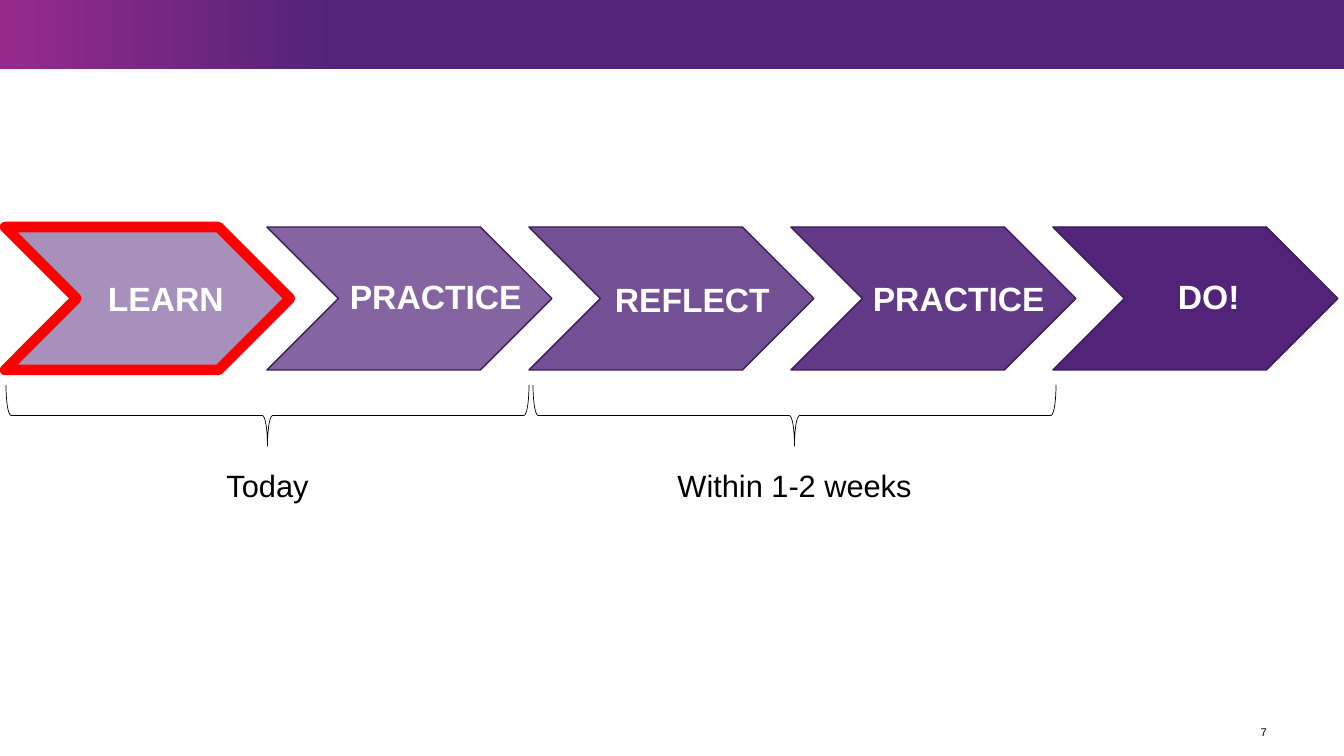
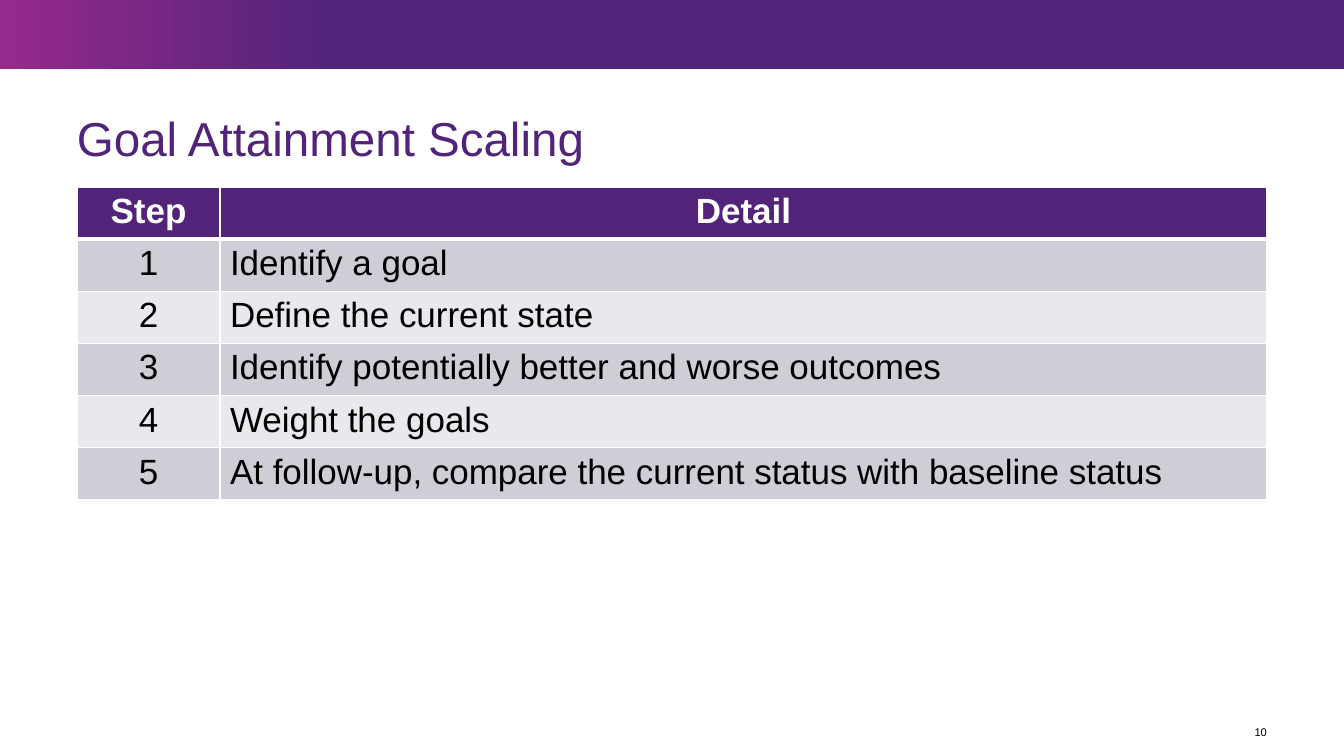
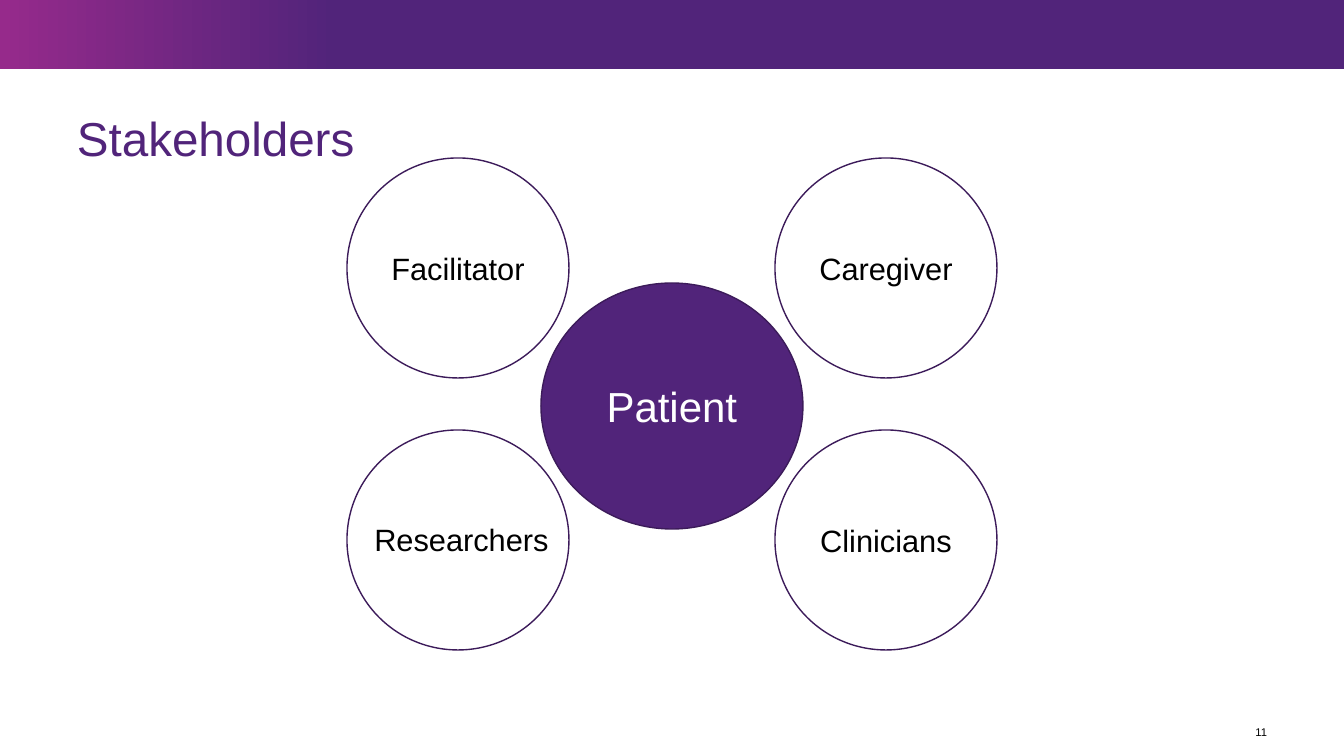
from lxml import etree
from pptx import Presentation
from pptx import util as u
from pptx.dml.color import RGBColor
from pptx.enum import shapes, text
from pptx.oxml.ns import qn

# Shared look
PURPLE = RGBColor(0x51, 0x24, 0x7A)
DARK_PURPLE = RGBColor(0x3C, 0x1B, 0x5A)
MAGENTA = RGBColor(0x96, 0x2A, 0x8B)
RED = RGBColor(0xFF, 0x00, 0x00)
WHITE = RGBColor(0xFF, 0xFF, 0xFF)
BLACK = RGBColor(0x00, 0x00, 0x00)
BAND_DARK = RGBColor(0xD0, 0xCD, 0xD7)
BAND_LIGHT = RGBColor(0xE9, 0xE8, 0xEC)
FONT = "Arial"
SLIDE_WIDTH, SLIDE_HEIGHT = 1344, 756
MARGIN = 77
CONTENT_WIDTH = SLIDE_WIDTH - 2 * MARGIN

SHAPE = shapes.MSO_SHAPE
LEFT, CENTER, RIGHT = text.PP_ALIGN.LEFT, text.PP_ALIGN.CENTER, text.PP_ALIGN.RIGHT


def px(length):
    return u.Inches(length / 100.8)


def box(left, top, width, height):
    return px(left), px(top), px(width), px(height)


def write(frame, words, size, color, align=LEFT, bold=False):
    """Put one formatted paragraph in a text frame."""
    frame.text = words
    paragraph = frame.paragraphs[0]
    paragraph.alignment = align
    font = paragraph.runs[0].font
    font.name, font.size, font.bold = FONT, u.Pt(size), bold
    font.color.rgb = color
    return paragraph


def add_text(slide, place, words, size, color, align=LEFT, bold=False, wrap=True):
    frame = slide.shapes.add_textbox(*box(*place)).text_frame
    frame.word_wrap = wrap
    write(frame, words, size, color, align, bold)
    return frame


def add_flush_text(slide, place, words, size, color, align=LEFT):
    """Add vertically centred text without insets."""
    frame = add_text(slide, place, words, size, color, align)
    frame.margin_left = frame.margin_top = frame.margin_right = frame.margin_bottom = 0
    frame.vertical_anchor = text.MSO_ANCHOR.MIDDLE
    return frame


def add_figure(slide, kind, place, fill=None, line=DARK_PURPLE, line_width=1, opacity=100):
    shape = slide.shapes.add_shape(kind, *box(*place))
    shape.shadow.inherit = False
    if fill is None:
        shape.fill.background()
    else:
        shape.fill.solid()
        shape.fill.fore_color.rgb = fill
    if opacity < 100:
        color = shape.fill._xPr.find(qn("a:solidFill"))[0]
        etree.SubElement(color, qn("a:alpha"), val=str(opacity * 1000))
    shape.line.color.rgb = line
    shape.line.width = u.Pt(line_width)
    return shape


def add_slide(presentation, number, title=None):
    """Start a slide with its gradient band, page number and title."""
    slide = presentation.slides.add_slide(presentation.slide_layouts[6])
    band = slide.shapes.add_shape(SHAPE.RECTANGLE, *box(0, 0, SLIDE_WIDTH, 69))
    band.shadow.inherit = False
    band.line.fill.background()
    band.fill.gradient()
    band.fill.gradient_angle = 0
    for stop, color, position in zip(band.fill.gradient_stops, (MAGENTA, PURPLE), (0, 0.25)):
        stop.color.rgb = color
        stop.position = position
    add_flush_text(slide, (1236, 719, 31, 26), str(number), 8, BLACK, RIGHT)
    if title:
        frame = add_flush_text(slide, (MARGIN, 116, CONTENT_WIDTH, 51), title, 34, PURPLE)
        frame.paragraphs[0].line_spacing = 0.9
    return slide


def set_borders(cell, top, bottom):
    """Draw white cell borders; top and bottom widths are in points."""
    properties = cell._tc.get_or_add_tcPr()
    for index, (side, width) in enumerate((("L", 1), ("R", 1), ("T", top), ("B", bottom))):
        line = etree.Element(qn("a:ln" + side), w=str(u.Pt(width)))
        fill = etree.SubElement(line, qn("a:solidFill"))
        etree.SubElement(fill, qn("a:srgbClr"), val=str(WHITE))
        properties.insert(index, line)


def add_table(slide, place, widths, rows):
    table = slide.shapes.add_table(len(rows), len(widths), *box(*place)).table
    table.horz_banding = False
    for column, width in zip(table.columns, widths):
        column.width = px(width)
    for row_index, row in enumerate(rows):
        header = row_index == 0
        fill = PURPLE if header else (BAND_LIGHT, BAND_DARK)[row_index % 2]
        for column_index, words in enumerate(row):
            cell = table.cell(row_index, column_index)
            cell.fill.solid()
            cell.fill.fore_color.rgb = fill
            align = CENTER if header or column_index == 0 else LEFT
            write(cell.text_frame, words, 25, WHITE if header else BLACK, align, header)
            set_borders(cell, 3 if row_index == 1 else 1, 3 if header else 1)


def add_period(slide, left, label):
    """Bracket two process steps and name the period below them."""
    span, depth = 523, 61
    brace_left = left + (span - depth) // 2
    brace = add_figure(slide, SHAPE.LEFT_BRACE, (brace_left, 154, depth, span),
                       line=BLACK, line_width=0.5)
    brace.rotation = 270
    add_text(slide, (left, 462, span, 47), label, 22, BLACK, CENTER)


def add_circle(slide, place, words, size=22, color=BLACK, fill=None):
    circle = add_figure(slide, SHAPE.OVAL, place, fill)
    if words:
        circle.text_frame.word_wrap = True
        circle.text_frame.vertical_anchor = text.MSO_ANCHOR.MIDDLE
        write(circle.text_frame, words, size, color, CENTER)


def build_process(presentation):
    slide = add_slide(presentation, 7)
    # Step name, opacity, and left, top and width of its label
    steps = [
        ("LEARN", 50, 98, 273, 137),
        ("PRACTICE", 70, 340, 271, 194),
        ("REFLECT", 80, 605, 274, 176),
        ("PRACTICE", 90, 863, 273, 194),
        ("DO!", 100, 1168, 271, 83),
    ]
    for index, (name, opacity, left, top, width) in enumerate(steps):
        line, line_width = (RED, 7.5) if index == 0 else (DARK_PURPLE, 1)
        add_figure(slide, SHAPE.CHEVRON, (5 + 262 * index, 227, 285, 143),
                   PURPLE, line, line_width, opacity)
        add_text(slide, (left, top, width, 50), name, 24, WHITE, bold=True, wrap=False)
    add_period(slide, 6, "Today")
    add_period(slide, 533, "Within 1-2 weeks")


def build_goal_scaling(presentation):
    slide = add_slide(presentation, 10, "Goal Attainment Scaling")
    details = [
        "Identify a goal",
        "Define the current state",
        "Identify potentially better and worse outcomes",
        "Weight the goals",
        "At follow-up, compare the current status with baseline status",
    ]
    rows = [("Step", "Detail")]
    rows += [(str(step), detail) for step, detail in enumerate(details, 1)]
    add_table(slide, (MARGIN, 187, CONTENT_WIDTH, 52 * len(rows)), (143, 1047), rows)


def build_stakeholders(presentation):
    slide = add_slide(presentation, 11, "Stakeholders")
    add_circle(slide, (541, 283, 262, 246), "Patient", 30, WHITE, PURPLE)
    # The long name has its own label, wider than the circle's text area
    for index, name in enumerate(("Facilitator", "Caregiver", None, "Clinicians")):
        row, column = divmod(index, 2)
        add_circle(slide, (347 + 428 * column, 158 + 272 * row, 222, 220), name)
    add_text(slide, (363, 516, 197, 47), "Researchers", 22, BLACK, CENTER, wrap=False)


def main():
    presentation = Presentation()
    presentation.slide_width = px(SLIDE_WIDTH)
    presentation.slide_height = px(SLIDE_HEIGHT)
    build_process(presentation)
    build_goal_scaling(presentation)
    build_stakeholders(presentation)
    presentation.save("out.pptx")


if __name__ == "__main__":
    main()
